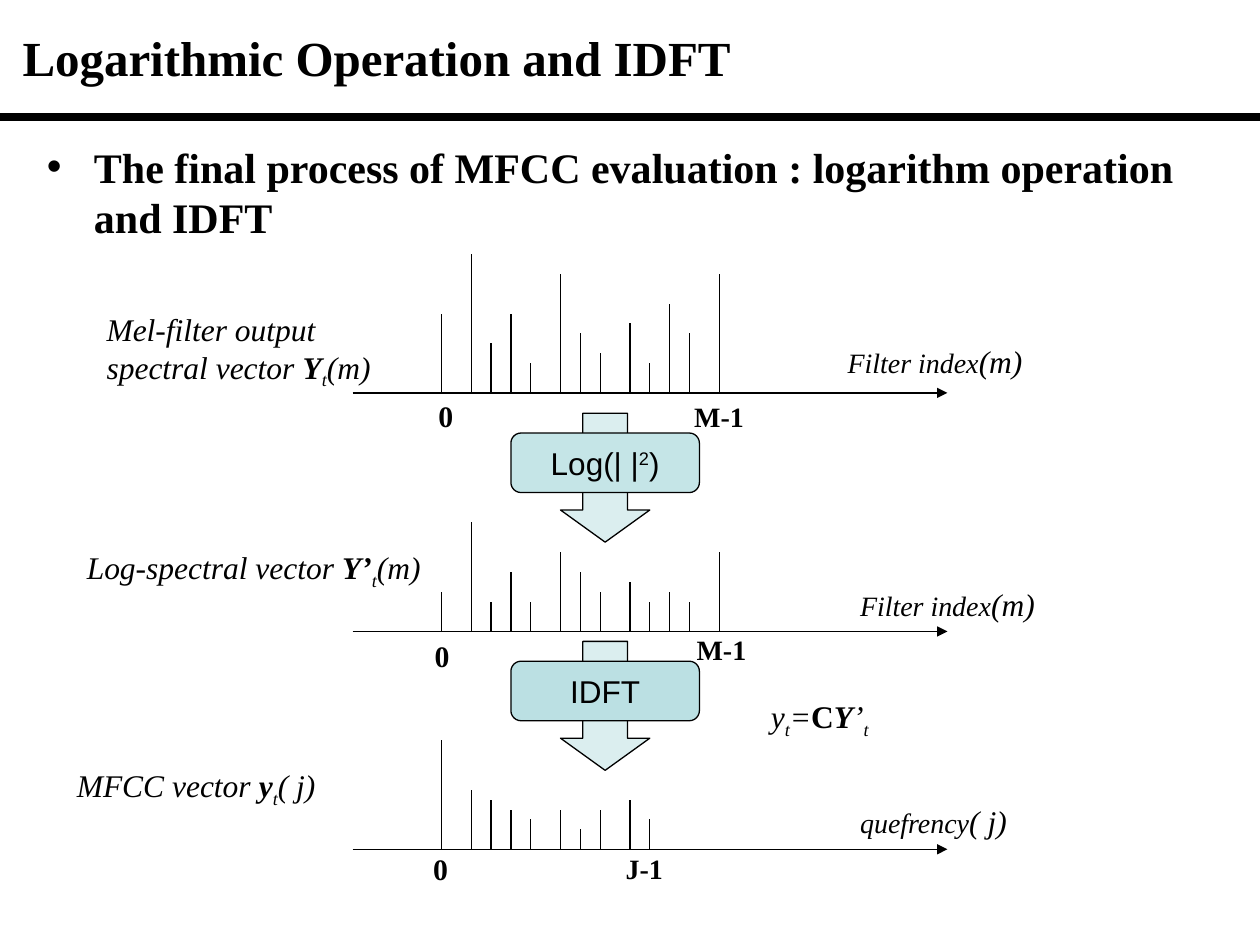
from lxml.etree import SubElement
from pptx import Presentation
from pptx.dml.color import RGBColor
from pptx.enum.shapes import MSO_CONNECTOR as Connector, MSO_SHAPE as Shape
from pptx.enum.text import MSO_ANCHOR as Anchor, MSO_AUTO_SIZE as AutoSize, PP_ALIGN as Align
from pptx.oxml.ns import qn
from pptx.util import Cm, Pt


def color(hex_text):
    """Turn a hex string into a colour."""
    return RGBColor.from_string(hex_text)


class DiagramSlide:
    """Hold the style and the current slide, and draw its elements."""

    serif, sans = "Times New Roman", "Arial"
    ink, arrow_fill = "000000", "D2EAEC"
    thin = 0.75
    baselines = {"sub": "-25000", "super": "30000"}

    def __init__(self, slide):
        self.slide = slide
        self.shapes = slide.shapes

    def add_runs(self, paragraph, runs, size, font=None):
        """Add runs given as text, style letters, and optional baseline or size."""
        for text, style, *extra in runs:
            if text == "\n":
                paragraph.add_line_break()
                continue
            run = paragraph.add_run()
            run.text = text
            run.font.name = font or self.serif
            run.font.bold = "b" in style
            run.font.italic = "i" in style
            run.font.color.rgb = color(self.ink)
            run.font.size = Pt(size)
            for option in extra:
                if option in self.baselines:
                    run._r.get_or_add_rPr().set("baseline", self.baselines[option])
                else:
                    run.font.size = Pt(option)

    def placeholder(self, index, box, text, size):
        """Move and fill a template placeholder, returning its paragraph."""
        holder = self.slide.placeholders[index]
        holder.left, holder.top, holder.width, holder.height = map(Cm, box)
        paragraph = holder.text_frame.paragraphs[0]
        paragraph.alignment = Align.LEFT
        self.add_runs(paragraph, [(text, "b")], size)
        return paragraph

    def title(self, box, text):
        """Fill the title."""
        self.placeholder(0, box, text, 28)
        self.shapes.title.text_frame.vertical_anchor = Anchor.MIDDLE

    def bullet(self, box, text):
        """Fill the body with one bullet."""
        properties = self.placeholder(1, box, text, 24)._p.get_or_add_pPr()
        properties.set("marL", str(Cm(0.95)))
        properties.set("indent", str(Cm(-0.95)))
        SubElement(properties, qn("a:buChar"), char="•")

    def line(self, x1, y1, x2, y2, width=thin, arrow=False):
        """Draw a straight line, with an arrowhead at its end if asked."""
        line = self.shapes.add_connector(Connector.STRAIGHT, *map(Cm, (x1, y1, x2, y2)))
        line.line.color.rgb = color(self.ink)
        line.line.width = Pt(width)
        if arrow:
            SubElement(line.line._get_or_add_ln(), qn("a:tailEnd"), type="triangle")
        SubElement(line._element.spPr, qn("a:effectLst"))

    def spectrum(self, base, positions, heights):
        """Draw an axis with a stem at each position."""
        self.line(7.11, base, 19.1, base, arrow=True)
        for x, height in zip(positions, heights):
            self.line(x, base, x, base - height)

    def label(self, box, runs, size=18, wrap=False, align=Align.LEFT):
        """Add a text box."""
        frame = self.shapes.add_textbox(*map(Cm, box)).text_frame
        frame.word_wrap = wrap
        frame.auto_size = AutoSize.SHAPE_TO_FIT_TEXT
        frame.paragraphs[0].alignment = align
        self.add_runs(frame.paragraphs[0], runs, size)

    def shape(self, kind, box, fill, adjustments):
        """Add an outlined preset shape."""
        shape = self.shapes.add_shape(kind, *map(Cm, box))
        shape.shadow.inherit = False
        shape.fill.solid()
        shape.fill.fore_color.rgb = color(fill)
        shape.line.color.rgb = color(self.ink)
        shape.line.width = Pt(self.thin)
        for index, value in enumerate(adjustments):
            shape.adjustments[index] = value
        return shape

    def operation(self, top, fill, runs):
        """Draw a process box over a down arrow."""
        arrow = self.shape(Shape.DOWN_ARROW, (11.3, top, 1.8, 2.6), self.arrow_fill, (0.5, 0.36))
        tint = arrow._element.spPr.find(qn("a:solidFill"))[0]
        SubElement(tint, qn("a:alpha"), val="80000")
        process = self.shape(Shape.ROUNDED_RECTANGLE, (10.3, top + 0.4, 3.8, 1.2), fill, (0.17,))
        frame = process.text_frame
        frame.word_wrap = False
        frame.vertical_anchor = Anchor.MIDDLE
        frame.paragraphs[0].alignment = Align.CENTER
        self.add_runs(frame.paragraphs[0], runs, 18, self.sans)


def main():
    """Build the slide and save it."""
    deck = Presentation()
    deck.slide_width, deck.slide_height = Cm(25.4), Cm(19.05)
    page = DiagramSlide(deck.slides.add_slide(deck.slide_layouts[1]))

    page.line(0, 2.36, 25.4, 2.36, width=4.5)
    page.title((0.2, 0.2, 25, 1.9), "Logarithmic Operation and IDFT")
    page.bullet(
        (0.69, 2.72, 23.44, 14.3),
        "The final process of MFCC evaluation : logarithm operation and IDFT",
    )

    filters = (8.9, 9.5, 9.9, 10.3, 10.7, 11.3, 11.7, 12.1, 12.7, 13.1, 13.5, 13.9, 14.5)
    mel_output = (1.6, 2.8, 1, 1.6, 0.6, 2.4, 1.2, 0.8, 1.4, 0.6, 1.8, 1.2, 2.4)
    log_output = (0.8, 2.2, 0.6, 1.2, 0.6, 1.6, 1.2, 0.8, 1, 0.6, 0.8, 0.6, 1.6)
    cepstrum = (2.2, 1.2, 1, 0.8, 0.6, 0.8, 0.4, 0.8, 1, 0.6)
    for base, heights in ((7.92, mel_output), (12.73, log_output), (17.12, cepstrum)):
        page.spectrum(base, filters, heights)

    page.operation(8.33, "C5E5E7", [("Log(| |", ""), ("2", "", "super"), (")", "")])
    page.operation(12.93, "BBE0E3", [("IDFT", "")])

    subscript = ("t", "i", "sub")
    vectors = (
        ((1.9, 6.12, 5.84, 1.78),
         [("Mel-filter output ", "i"), ("\n", ""), ("spectral vector ", "i")], "Y", "(m)"),
        ((1.5, 10.92, 7.26, 1.02), [("Log-spectral vector ", "i")], "Y’", "(m)"),
        ((1.3, 15.32, 5.33, 1.02), [("MFCC vector ", "i")], "y", "( j)"),
    )
    for box, caption, symbol, index in vectors:
        page.label(box, [*caption, (symbol, "bi"), subscript, (index, "i")])

    axis_names = (
        (16.84, 6.78, 4.06, "Filter index", "(m)"),
        (17.09, 11.66, 4.06, "Filter index", "(m)"),
        (17.09, 16.05, 3.51, "quefrency", "( j)"),
    )
    for left, top, width, name, index in axis_names:
        page.label((left, top, width, 1.02), [(name, "i", 16), (index, "i")])

    page.label(
        (15.29, 13.92, 2.51, 1.02),
        [("y", "i"), subscript, ("=", "i"), ("C", "b"), ("Y", "bi"), ("’", "i"), subscript],
    )

    for left, top, width in ((8.59, 7.9, 0.61), (8.51, 12.73, 0.61), (8.48, 17.02, 0.89)):
        page.label((left, top, width, 0.97), [("0", "b")], 17, wrap=True)
    last_indices = (
        (13.39, 7.92, 2.21, "M-1"),
        (13.44, 12.62, 2.21, "M-1"),
        (12.29, 17.04, 1.4, "J-1"),
    )
    for left, top, width, text in last_indices:
        page.label((left, top, width, 0.94), [(text, "b")], 16, wrap=True, align=Align.CENTER)

    deck.save("out.pptx")


if __name__ == "__main__":
    main()
